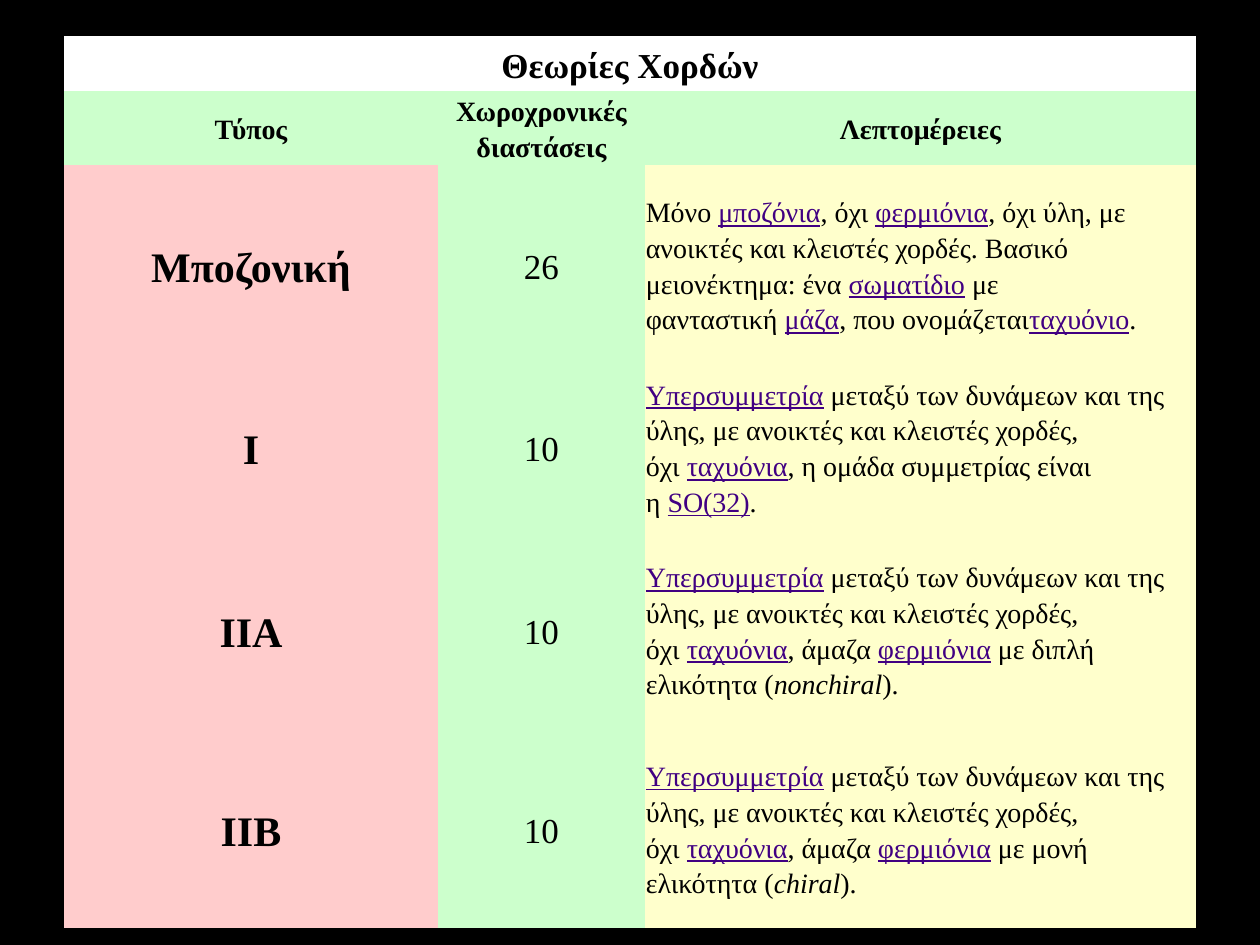
from pptx import Presentation
from pptx.dml.color import RGBColor as RGB
from pptx.enum.text import MSO_ANCHOR as ANCHOR, PP_ALIGN as ALIGN
from pptx.oxml.ns import qn
from pptx.util import Emu, Pt

PX = 914400 / 126
FONT = "Times New Roman"
NO_STYLE = "{2D5ABB26-0587-4C30-8999-92F81FD0307C}"
COLORS = {
    "background": "000000", "text": "000000", "link": "410082",
    "title": "FFFFFF", "green": "CCFFCC", "pink": "FFCCCC", "yellow": "FFFFCC",
}


def px(n):
    return Emu(round(n * PX))


def fill_cell(cell, text, size, fill, bold=False, align=ALIGN.CENTER):
    """Text between bars is a link, or italic if it starts with *; ~ is a no-break space."""
    cell.fill.solid()
    cell.fill.fore_color.rgb = RGB.from_string(COLORS[fill])
    cell.vertical_anchor = ANCHOR.MIDDLE
    cell.margin_left = cell.margin_right = px(1)
    cell.margin_top = cell.margin_bottom = px(1)
    paragraph = cell.text_frame.paragraphs[0]
    paragraph.alignment = align
    paragraph.line_spacing = 1.15
    for i, part in enumerate(text.replace("~", chr(160)).split("|")):
        marked = i % 2 == 1
        italic = marked and part.startswith("*")
        link = marked and not italic
        run = paragraph.add_run()
        run.text = part.lstrip("*")
        run.font.name = FONT
        run.font.size = Pt(size)
        run.font.bold = bold
        run.font.italic = italic
        run.font.underline = link
        run.font.color.rgb = RGB.from_string(COLORS["link" if link else "text"])


prs = Presentation()
prs.slide_width, prs.slide_height = px(1260), px(945)
slide = prs.slides.add_slide(prs.slide_layouts[6])
slide.background.fill.solid()
slide.background.fill.fore_color.rgb = RGB.from_string(COLORS["background"])

# Table grid
col_widths = [374, 207, 551]
row_heights = [55, 74, 199, 166, 199, 199]
theories = slide.shapes.add_table(
    len(row_heights), len(col_widths), px(64), px(36),
    px(sum(col_widths)), px(sum(row_heights))).table
theories.first_row = theories.horz_banding = False
theories._tbl.tblPr.find(qn("a:tableStyleId")).text = NO_STYLE
for column, width in zip(theories.columns, col_widths):
    column.width = px(width)
for row, height in zip(theories.rows, row_heights):
    row.height = px(height)

# Title and column headings
theories.cell(0, 0).merge(theories.cell(0, 2))
fill_cell(theories.cell(0, 0), "Θεωρίες Χορδών", 20, "title", bold=True)
for c, heading in enumerate(["Τύπος", "Χωροχρονικές διαστάσεις", "Λεπτομέρειες"]):
    fill_cell(theories.cell(1, c), heading, 16, "green", bold=True)

# One row per string theory
supersymmetry = ("|Υπερσυμμετρία|~μεταξύ των δυνάμεων και της ύλης, "
                 "με ανοικτές και κλειστές χορδές, όχι~|ταχυόνια|, ")
fermions = supersymmetry + "άμαζα~|φερμιόνια|~με "
string_types = [
    ("Μποζονική", "26",
     "Μόνο~|μποζόνια|, όχι~|φερμιόνια|, όχι ύλη, με ανοικτές και κλειστές χορδές. "
     "Βασικό μειονέκτημα: ένα~|σωματίδιο|~με φανταστική~|μάζα|, "
     "που ονομάζεται|ταχυόνιο|."),
    ("I", "10", supersymmetry + "η ομάδα συμμετρίας είναι η~|SO(32)|."),
    ("IIA", "10", fermions + "διπλή ελικότητα (|*nonchiral|)."),
    ("IIB", "10", fermions + "μονή ελικότητα (|*chiral|)."),
]
for r, (kind, dimensions, details) in enumerate(string_types, start=2):
    fill_cell(theories.cell(r, 0), kind, 24, "pink", bold=True)
    fill_cell(theories.cell(r, 1), dimensions, 20, "green")
    fill_cell(theories.cell(r, 2), details, 16, "yellow", align=ALIGN.LEFT)

prs.save("out.pptx")
